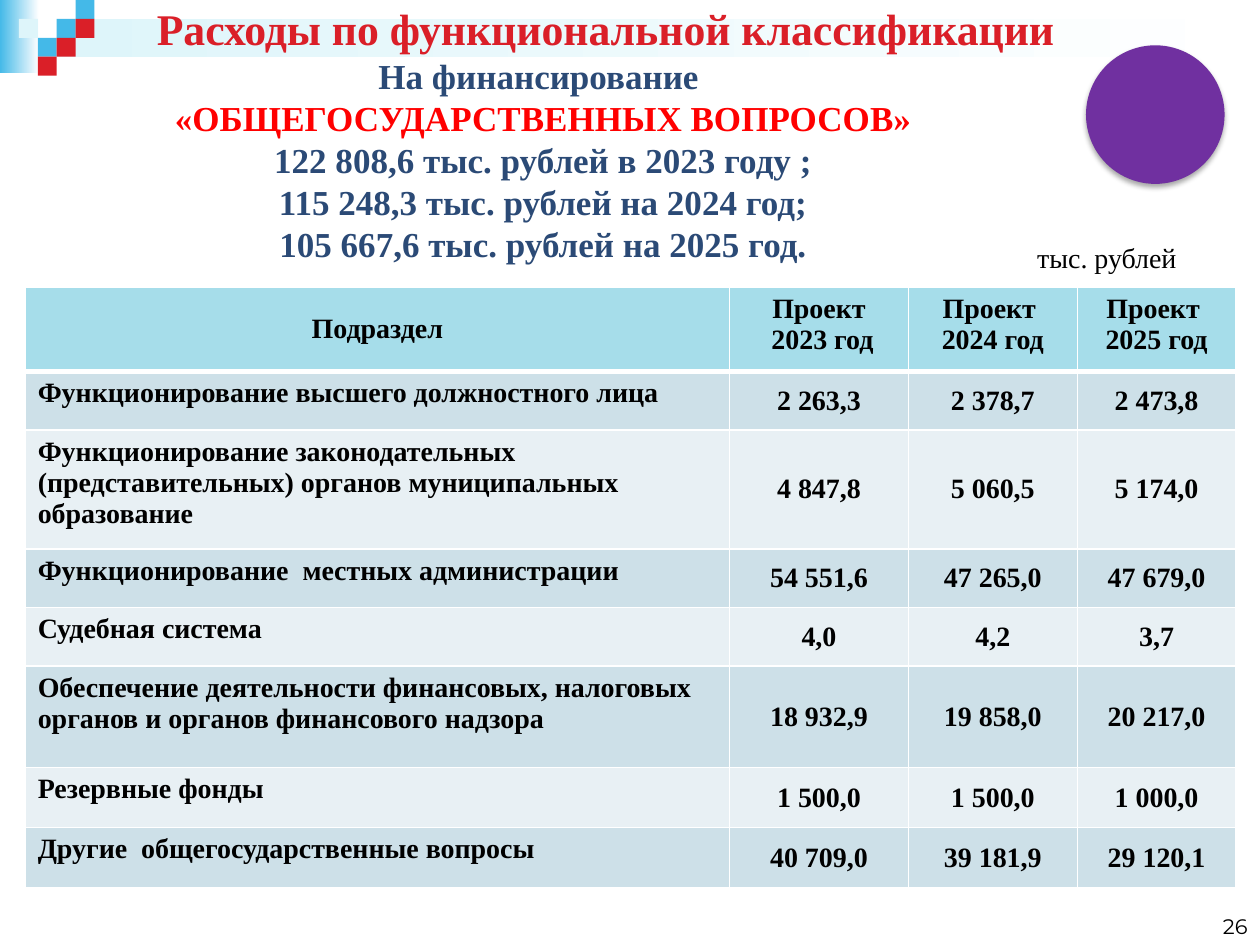
"""Build the slide on spending by functional class."""
from dataclasses import dataclass
from typing import NamedTuple

from lxml.etree import SubElement
from pptx import Presentation
from pptx.dml.color import RGBColor
from pptx.enum.shapes import MSO_SHAPE as Shape
from pptx.enum.text import MSO_ANCHOR as Anchor, MSO_AUTO_SIZE as Fit, PP_ALIGN as Align
from pptx.oxml.ns import qn
from pptx.util import Pt

WHITE = RGBColor(0xFF, 0xFF, 0xFF)
BLACK = RGBColor(0x00, 0x00, 0x00)
BLUE = RGBColor(0x44, 0xB9, 0xE8)
PALE = RGBColor(0xDE, 0xF5, 0xFA)
CRIMSON = RGBColor(0xDA, 0x1F, 0x28)
RED = RGBColor(0xFF, 0x00, 0x00)
NAVY = RGBColor(0x2B, 0x4A, 0x76)
PURPLE = RGBColor(0x70, 0x30, 0xA0)
HEAD = RGBColor(0xA6, 0xDD, 0xEA)
BANDS = (RGBColor(0xCD, 0xE0, 0xE8), RGBColor(0xE8, 0xF0, 0xF4))
SERIF = "Times New Roman"
SIDE = 10.8


class Box(NamedTuple):
    left: float
    top: float
    width: float
    height: float


class Tile(NamedTuple):
    col: int
    row: int
    color: RGBColor


@dataclass
class Style:
    size: float
    color: RGBColor = BLACK
    bold: bool = False
    font: str = SERIF
    align: Align = Align.CENTER
    anchor: Anchor = Anchor.MIDDLE


class Line(NamedTuple):
    label: str
    sums: tuple[str, str, str]
    height: float


TILES = (
    Tile(3, 1, BLUE), Tile(4, 0, BLUE), Tile(4, 1, CRIMSON), Tile(2, 2, BLUE),
    Tile(1, 1, PALE), Tile(3, 2, CRIMSON), Tile(2, 3, CRIMSON),
)
WIDTHS = (402.5, 102.2, 96.5, 90.7)
LINES = (
    Line("Подраздел", ("Проект\n 2023 год", "Проект \n2024 год", "Проект \n2025 год"), 48),
    Line("Функционирование высшего должностного лица", ("2 263,3", "2 378,7", "2 473,8"), 33.5),
    Line("Функционирование законодательных (представительных) органов муниципальных образование",
         ("4 847,8", "5 060,5", "5 174,0"), 68),
    Line("Функционирование  местных администрации", ("54 551,6", "47 265,0", "47 679,0"), 33.5),
    Line("Судебная система", ("4,0", "4,2", "3,7"), 33.5),
    Line("Обеспечение деятельности финансовых, налоговых органов и органов финансового надзора",
         ("18 932,9", "19 858,0", "20 217,0"), 58),
    Line("Резервные фонды", ("1 500,0", "1 500,0", "1 000,0"), 34.3),
    Line("Другие  общегосударственные вопросы", ("40 709,0", "39 181,9", "29 120,1"), 34.3),
)
GOALS = (
    "На финансирование ",
    "«ОБЩЕГОСУДАРСТВЕННЫХ ВОПРОСОВ»",
    "122 808,6 тыс. рублей в 2023 году ;",
    "115 248,3 тыс. рублей на 2024 год;",
    "105 667,6 тыс. рублей на 2025 год.",
)


def write(frame, text: str, style: Style) -> None:
    """Set the text of a frame and format its runs."""
    frame.text = text
    frame.word_wrap = True
    frame.vertical_anchor = style.anchor
    for par in frame.paragraphs:
        par.alignment = style.align
        for run in par.runs:
            font = run.font
            font.name, font.size, font.bold = style.font, Pt(style.size), style.bold
            font.color.rgb = style.color


def label(slide, box: Box, text: str, style: Style):
    """Add a text box and return its frame."""
    frame = slide.shapes.add_textbox(*map(Pt, box)).text_frame
    write(frame, text, style)
    return frame


def block(slide, box: Box, color: RGBColor, fade: bool = False, kind=Shape.RECTANGLE):
    """Add a plain shape, solid or fading to white."""
    shape = slide.shapes.add_shape(kind, *map(Pt, box))
    shape.shadow.inherit = False
    shape.line.fill.background()
    if fade:
        shape.fill.gradient()
        shape.fill.gradient_angle = 0
        for stop, tint in zip(shape.fill.gradient_stops, (color, WHITE)):
            stop.color.rgb = tint
    else:
        shape.fill.solid()
        shape.fill.fore_color.rgb = color
    return shape


def shade(shape) -> None:
    """Cast a soft black shadow below a shape."""
    effects = shape.element.spPr.find(qn("a:effectLst"))
    outer = SubElement(effects, qn("a:outerShdw"), blurRad=str(Pt(3.1)),
                       dist=str(Pt(1.8)), dir="5400000", rotWithShape="0")
    tint = SubElement(outer, qn("a:srgbClr"), val=str(BLACK))
    SubElement(tint, qn("a:alpha"), val="35000")


def edge(cell, top: float, base: float) -> None:
    """Draw white borders round a cell."""
    props = cell._tc.get_or_add_tcPr()
    for side, width in (("L", 1), ("R", 1), ("T", top), ("B", base)):
        line = SubElement(props, qn(f"a:ln{side}"), w=str(Pt(width)))
        fill = SubElement(line, qn("a:solidFill"))
        SubElement(fill, qn("a:srgbClr"), val=str(WHITE))


def grid(slide, box: Box) -> None:
    """Add the table of sums."""
    table = slide.shapes.add_table(len(LINES), len(WIDTHS), *map(Pt, box)).table
    for col, width in zip(table.columns, WIDTHS):
        col.width = Pt(width)
    for y, line in enumerate(LINES):
        table.rows[y].height = Pt(line.height)
        for x, text in enumerate((line.label, *line.sums)):
            cell = table.cell(y, x)
            edge(cell, 3 if y == 1 else 1, 3 if y == 0 else 1)
            cell.fill.solid()
            cell.fill.fore_color.rgb = BANDS[(y - 1) % 2] if y else HEAD
            align = Align.LEFT if y and x == 0 else Align.CENTER
            write(cell.text_frame, text, Style(16, bold=True, align=align))
            cell.vertical_anchor = Anchor.MIDDLE if (y == 0) == (x == 0) else Anchor.TOP


def main() -> None:
    """Build and save the deck."""
    deck = Presentation()
    deck.slide_width, deck.slide_height = Pt(720), Pt(540)
    slide = deck.slides.add_slide(deck.slide_layouts[5])

    block(slide, Box(0, 0, 22.3, 41.8), BLUE, fade=True)
    block(slide, Box(3 * SIDE, SIDE, 720 - 3 * SIDE, 2 * SIDE), PALE, fade=True)
    for tile in TILES:
        block(slide, Box(tile.col * SIDE, tile.row * SIDE, SIDE, SIDE), tile.color)

    label(slide, Box(552, 504, 168, 36), "26",
          Style(12, font="Montserrat", align=Align.RIGHT, anchor=Anchor.BOTTOM))

    title = slide.shapes.title
    title.left, title.top, title.width, title.height = map(Pt, (59.8, 0, 572.4, 31.7))
    write(title.text_frame, "Расходы по функциональной классификации",
          Style(25, CRIMSON, bold=True))
    title.text_frame.auto_size = Fit.NONE
    title.element.getparent().append(title.element)

    grid(slide, Box(14.4, 164.2, 691.9, 343.1))
    shade(block(slide, Box(620.6, 25.9, 79.2, 79.2), PURPLE, kind=Shape.OVAL))
    label(slide, Box(558.7, 133.9, 147.6, 26.6), "тыс. рублей",
          Style(16, anchor=Anchor.TOP))

    goals = label(slide, Box(0, 31.7, 620.6, 118.8), "\n".join(GOALS),
                  Style(20, NAVY, bold=True))
    for par in goals.paragraphs:
        par.line_spacing = Pt(24)
    goals.paragraphs[1].runs[0].font.color.rgb = RED

    deck.save("out.pptx")


if __name__ == "__main__":
    main()
